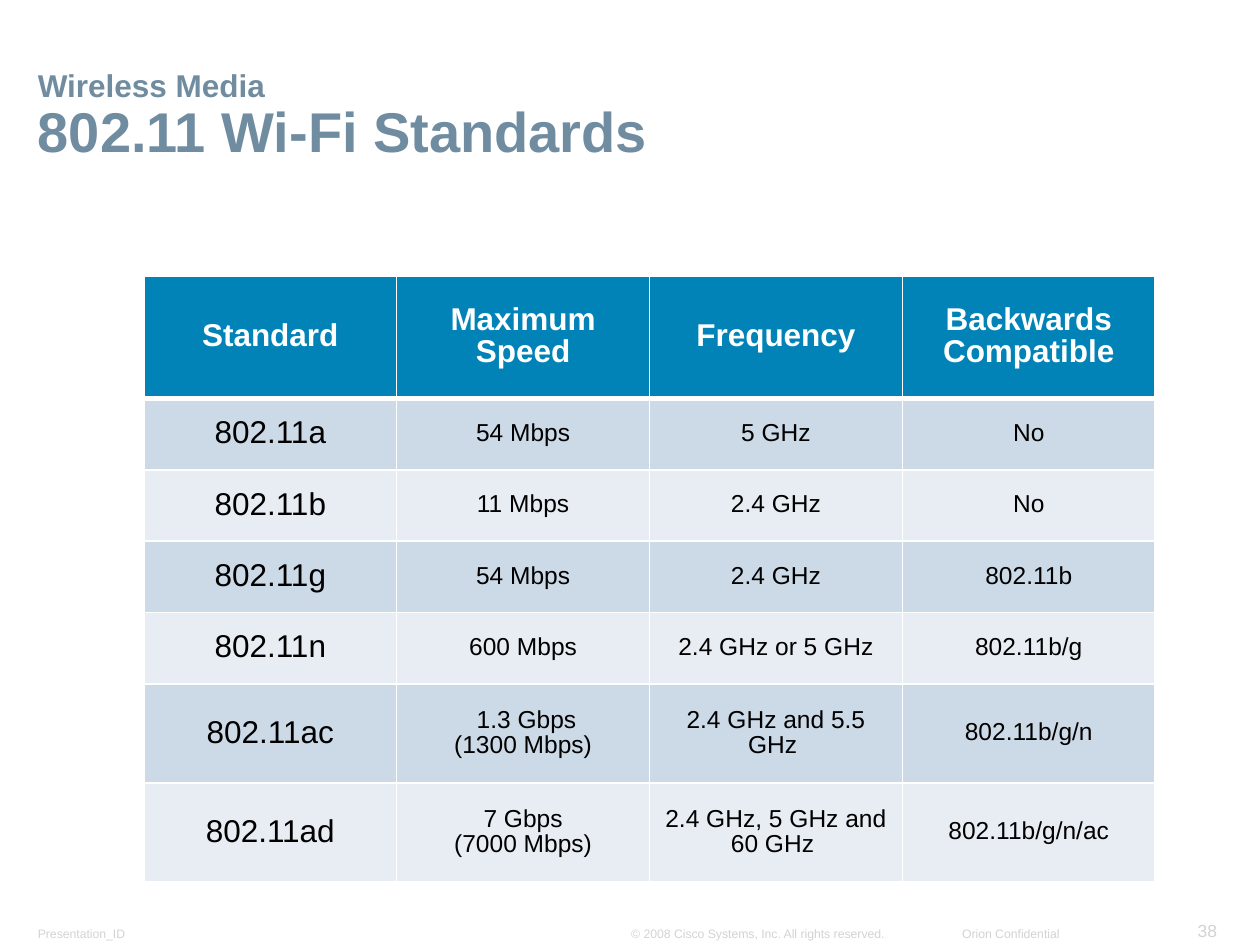
from dataclasses import dataclass

from lxml import etree
from pptx import Presentation
from pptx.dml.color import RGBColor
from pptx.enum.text import MSO_ANCHOR, PP_ALIGN
from pptx.oxml.ns import qn
from pptx.util import Pt

LEFT, CENTER, RIGHT = PP_ALIGN.LEFT, PP_ALIGN.CENTER, PP_ALIGN.RIGHT
MIDDLE, BOTTOM = MSO_ANCHOR.MIDDLE, MSO_ANCHOR.BOTTOM

WHITE = RGBColor(0xFF, 0xFF, 0xFF)
BLACK = RGBColor(0x00, 0x00, 0x00)
SLATE = RGBColor(0x70, 0x8C, 0xA1)
FOOTER_GRAY = RGBColor(0xD3, 0xD3, 0xD3)
HEADER_BLUE = RGBColor(0x01, 0x83, 0xB7)
BANDS = (RGBColor(0xCC, 0xD9, 0xE6), RGBColor(0xE7, 0xED, 0xF3))
FONT = "Arial"
LINE_SPACING = 0.9

TABLE_LEFT, TABLE_TOP = 82.2, 157.7
COLUMN_WIDTH = 144.5
HEADER_HEIGHT, ROW_HEIGHT, TALL_ROW_HEIGHT = 70, 40.8, 56.6
HEADERS = ("Standard", "Maximum Speed", "Frequency", "Backwards Compatible")


@dataclass
class Label:
    text: str
    left: float
    top: float
    width: float
    height: float
    sizes: tuple
    color: RGBColor = FOOTER_GRAY
    bold: bool = False
    align: PP_ALIGN = LEFT
    spacing: float = 1.0
    wrap: bool = False


@dataclass
class Standard:
    name: str
    speed: str
    frequency: str
    compatible: str
    height: float = ROW_HEIGHT


LABELS = (
    Label("Wireless Media\v802.11 Wi-Fi Standards", 15.1, 31, 690.5, 66.2,
          (18, 32), SLATE, True, spacing=LINE_SPACING, wrap=True),
    Label("Presentation_ID", 15.1, 525.6, 75.6, 15.1, (7,), wrap=True),
    Label("© 2008 Cisco Systems, Inc. All rights reserved.",
          354.2, 525.6, 159.1, 15.1, (7,)),
    Label("Orion Confidential", 542.9, 525.6, 69.1, 15.1, (7,), align=RIGHT),
    Label("38", 676.8, 522, 25.2, 18.7, (10,), align=RIGHT),
)

STANDARDS = (
    Standard("802.11a", "54 Mbps", "5 GHz", "No"),
    Standard("802.11b", "11 Mbps", "2.4 GHz", "No"),
    Standard("802.11g", "54 Mbps", "2.4 GHz", "802.11b"),
    Standard("802.11n", "600 Mbps", "2.4 GHz or 5 GHz", "802.11b/g"),
    Standard("802.11ac", " 1.3 Gbps\n(1300 Mbps)", "2.4 GHz and 5.5 GHz ",
             "802.11b/g/n", TALL_ROW_HEIGHT),
    Standard("802.11ad", "7 Gbps\n(7000 Mbps)", "2.4 GHz, 5 GHz and 60 GHz ",
             "802.11b/g/n/ac", TALL_ROW_HEIGHT),
)


def style_span(span, size: float, color: RGBColor, bold: bool) -> None:
    span.font.name = FONT
    span.font.size = Pt(size)
    span.font.bold = bold
    span.font.color.rgb = color


def add_label(page, label: Label) -> None:
    box = page.shapes.add_textbox(Pt(label.left), Pt(label.top),
                                  Pt(label.width), Pt(label.height))
    frame = box.text_frame
    frame.word_wrap = label.wrap
    frame.vertical_anchor = BOTTOM
    frame.margin_left = frame.margin_right = Pt(6.5)
    frame.margin_top = frame.margin_bottom = Pt(3)
    frame.text = label.text
    paragraph = frame.paragraphs[0]
    paragraph.alignment = label.align
    paragraph.line_spacing = label.spacing
    for span, size in zip(paragraph.runs, label.sizes):
        style_span(span, size, label.color, label.bold)


def set_border(cell, side: str, width: float) -> None:
    properties = cell._tc.get_or_add_tcPr()
    line = etree.Element(qn(f"a:{side}"), w=str(Pt(width)))
    fill = etree.SubElement(line, qn("a:solidFill"))
    etree.SubElement(fill, qn("a:srgbClr"), val=str(WHITE))
    # Borders come before the cell fill
    properties.insert(len(properties) - 1, line)


def fill_cell(cell, text: str, size: float, color: RGBColor, bold: bool,
              fill: RGBColor, top: float, bottom: float) -> None:
    cell.fill.solid()
    cell.fill.fore_color.rgb = fill
    for side, width in (("lnL", 1), ("lnR", 1), ("lnT", top), ("lnB", bottom)):
        set_border(cell, side, width)
    cell.vertical_anchor = MIDDLE
    cell.text_frame.text = text
    for paragraph in cell.text_frame.paragraphs:
        paragraph.alignment = CENTER
        paragraph.line_spacing = LINE_SPACING
        for span in paragraph.runs:
            style_span(span, size, color, bold)


def add_standards_table(page) -> None:
    heights = [HEADER_HEIGHT] + [standard.height for standard in STANDARDS]
    table = page.shapes.add_table(
        len(heights), len(HEADERS), Pt(TABLE_LEFT), Pt(TABLE_TOP),
        Pt(COLUMN_WIDTH * len(HEADERS)), Pt(sum(heights))).table
    table.horz_banding = False
    for column in table.columns:
        column.width = Pt(COLUMN_WIDTH)
    for row, height in zip(table.rows, heights):
        row.height = Pt(height)

    # Header row
    for column, text in enumerate(HEADERS):
        fill_cell(table.cell(0, column), text, 18, WHITE, True,
                  HEADER_BLUE, 1, 3)

    # One banded row per standard
    for row, standard in enumerate(STANDARDS, start=1):
        texts = (standard.name, standard.speed,
                 standard.frequency, standard.compatible)
        for column, text in enumerate(texts):
            fill_cell(table.cell(row, column), text, 14 if column else 18,
                      BLACK, False, BANDS[(row - 1) % 2],
                      3 if row == 1 else 1, 1)


def main() -> None:
    deck = Presentation()
    deck.slide_width, deck.slide_height = Pt(720), Pt(540)
    page = deck.slides.add_slide(deck.slide_layouts[6])

    # Title and footer
    for label in LABELS:
        add_label(page, label)

    add_standards_table(page)
    deck.save("out.pptx")


if __name__ == "__main__":
    main()
